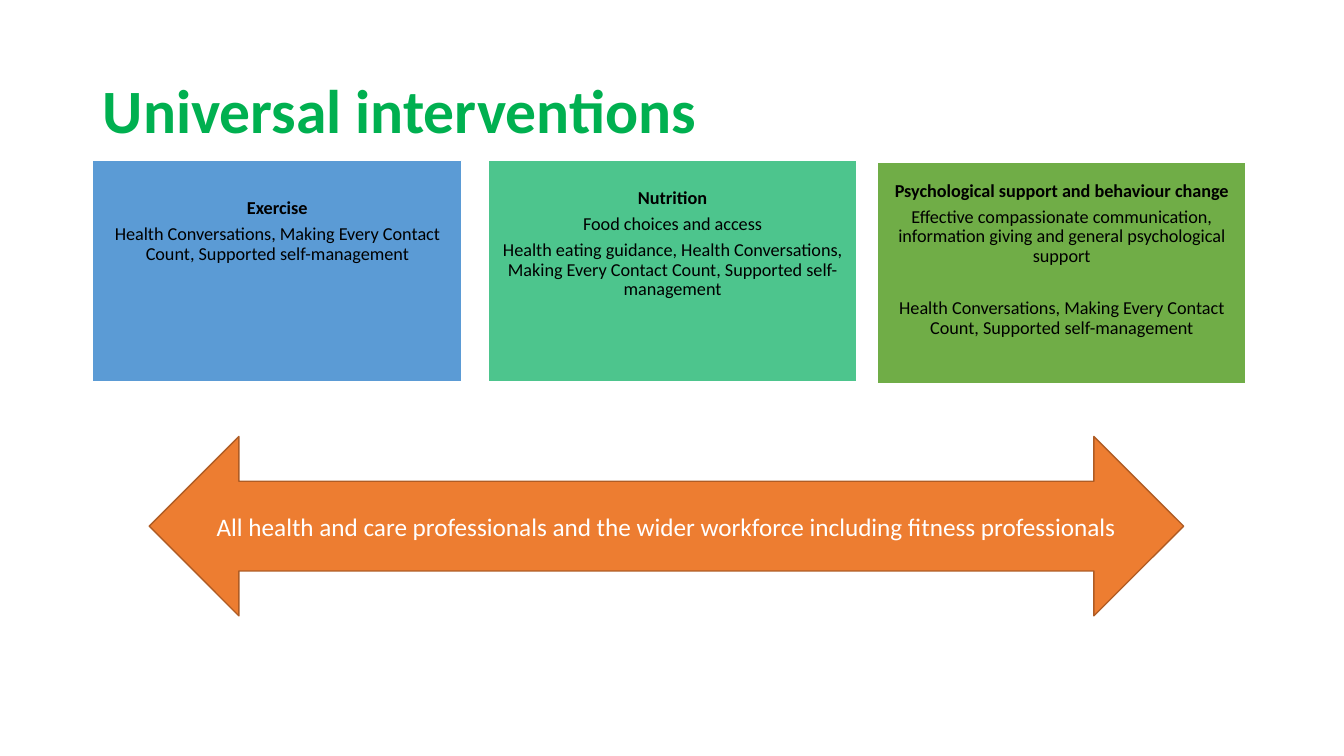
"""Build the slide on universal interventions."""
from pptx import Presentation
from pptx.dml.color import RGBColor
from pptx.enum.shapes import MSO_SHAPE
from pptx.enum.text import MSO_ANCHOR, PP_ALIGN
from pptx.util import Inches, Pt

GREEN = RGBColor(0x00, 0xB0, 0x50)
BLUE = RGBColor(0x5B, 0x9B, 0xD5)
MINT = RGBColor(0x4D, 0xC5, 0x8D)
OLIVE = RGBColor(0x70, 0xAD, 0x47)
ORANGE = RGBColor(0xED, 0x7D, 0x31)
BROWN = RGBColor(0xAF, 0x5C, 0x24)
BLACK = RGBColor(0, 0, 0)
WHITE = RGBColor(0xFF, 0xFF, 0xFF)
PARAGRAPH_GAP = 4.55
SECTION_GAP = 23
SHARED = "Health Conversations, Making Every Contact Count, Supported self-management"


def add_block(page, kind, left, top, width, height, fill, line):
    block = page.shapes.add_shape(
        kind, Inches(left), Inches(top), Inches(width), Inches(height))
    block.shadow.inherit = False
    block.fill.solid()
    block.fill.fore_color.rgb = fill
    block.line.color.rgb = line
    block.line.width = Pt(1)
    block.text_frame.word_wrap = True
    return block


def style_paragraph(para, size, color, bold, align):
    para.alignment = align
    para.font.name = "Calibri"
    para.font.size = Pt(size)
    para.font.color.rgb = color
    para.font.bold = bold


deck = Presentation()
deck.slide_width = Inches(13.33)
deck.slide_height = Inches(7.5)
page = deck.slides.add_slide(deck.slide_layouts[5])

title = page.shapes.title
title.left, title.top = Inches(0.92), Inches(0.4)
title.width, title.height = Inches(11.5), Inches(1.45)
title.text_frame.text = "Universal interventions"
title.text_frame.vertical_anchor = MSO_ANCHOR.MIDDLE
heading = title.text_frame.paragraphs[0]
heading.line_spacing = 0.9
style_paragraph(heading, 44, GREEN, True, PP_ALIGN.LEFT)

interventions = [
    (0.92, 1.59, BLUE, 0.38, [
        ("Exercise", PARAGRAPH_GAP),
        (SHARED, PARAGRAPH_GAP)]),
    (4.84, 1.59, MINT, 0.28, [
        ("Nutrition", PARAGRAPH_GAP),
        ("Food choices and access", PARAGRAPH_GAP),
        ("Health eating guidance, " + SHARED, PARAGRAPH_GAP)]),
    (8.7, 1.61, OLIVE, 0.19, [
        ("Psychological support and behaviour change", PARAGRAPH_GAP),
        ("Effective compassionate communication, information giving "
         "and general psychological support", SECTION_GAP),
        (SHARED, PARAGRAPH_GAP)]),
]
for left, top, fill, text_top, lines in interventions:
    box = add_block(page, MSO_SHAPE.RECTANGLE, left, top, 3.66, 2.2, fill, WHITE)
    frame = box.text_frame
    frame.vertical_anchor = MSO_ANCHOR.TOP
    frame.margin_left = frame.margin_right = frame.margin_bottom = Inches(0.05)
    frame.margin_top = Inches(text_top)
    frame.text = "\n".join(text for text, gap in lines)
    for index, (para, (text, gap)) in enumerate(zip(frame.paragraphs, lines)):
        para.line_spacing = 0.9
        para.space_after = Pt(gap)
        style_paragraph(para, 13, BLACK, index == 0, PP_ALIGN.CENTER)

arrow = add_block(page, MSO_SHAPE.LEFT_RIGHT_ARROW, 1.48, 4.33, 10.26, 1.78, ORANGE, BROWN)
arrow.text_frame.vertical_anchor = MSO_ANCHOR.MIDDLE
arrow.text_frame.text = ("All health and care professionals and the wider workforce "
                         "including fitness professionals")
style_paragraph(arrow.text_frame.paragraphs[0], 18, WHITE, False, PP_ALIGN.CENTER)

deck.save("out.pptx")
